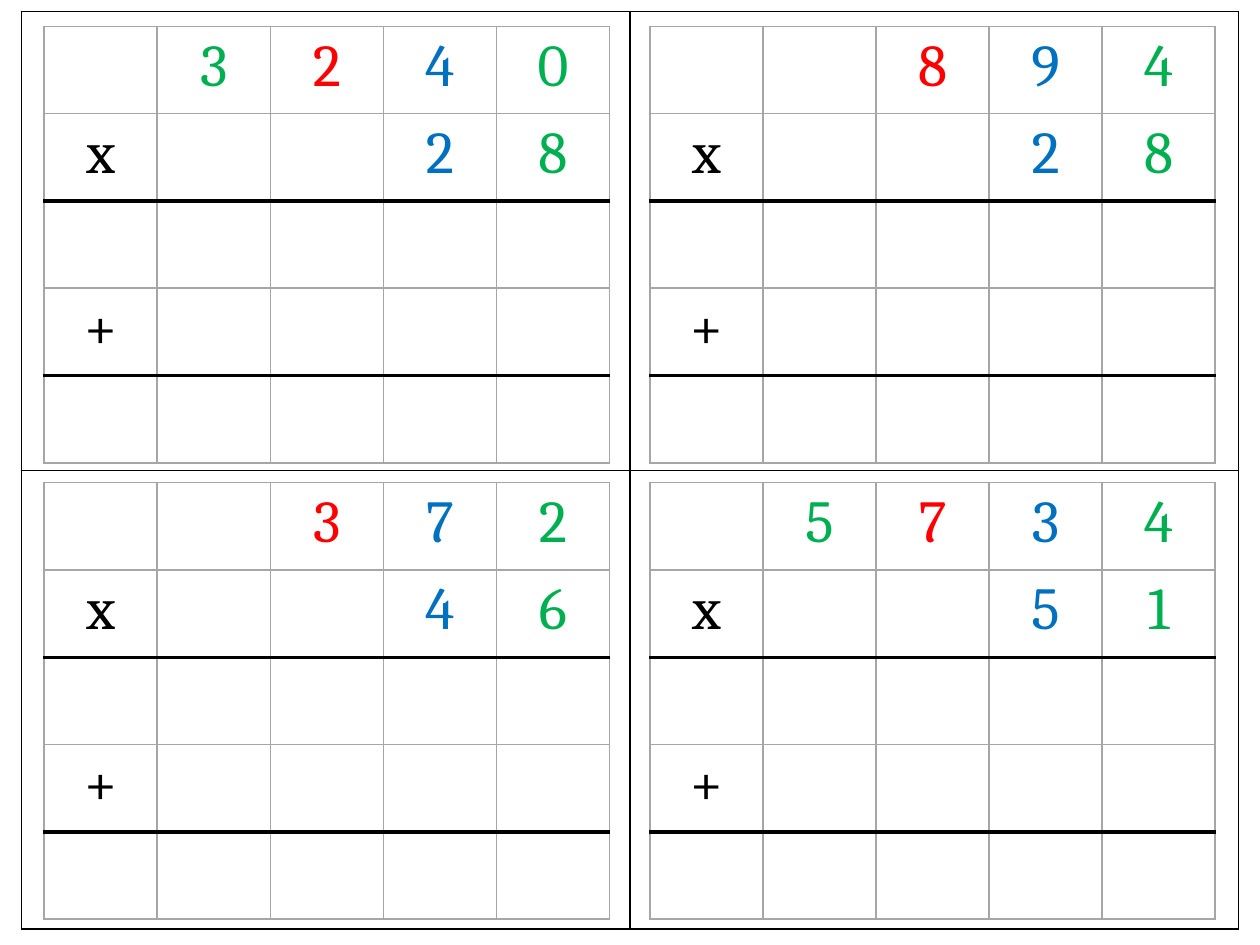
from lxml.etree import SubElement
from pptx import Presentation
from pptx.dml.color import RGBColor
from pptx.enum.text import PP_ALIGN
from pptx.oxml.ns import qn
from pptx.util import Cm, Pt

COLORS = {
    "paper": "FFFFFF",
    "ink": "000000",
    "grid": "A6A6A6",
    "green": "00B050",
    "red": "FF0000",
    "blue": "0070C0",
}
PROBLEMS = [
    [("3240", "28"), ("894", "28")],
    [("372", "46"), ("5734", "51")],
]
PLACE_COLORS = ["ink", "green", "red", "blue", "green"]
FONT, SIZE = "Cambria", 34
THIN, THICK = ("grid", 1), ("ink", 2.25)
FRAME_LINE = ("ink", 1)

FRAME_LEFT, FRAME_TOP = 0.43, 0.23
FRAME_W, FRAME_H = 12.27, 9.25
GRID_LEFT, GRID_TOP = 0.89, 0.53
GRID_DX, GRID_DY = 12.21, 9.2
CELL_W, CELL_H = 2.28, 1.76


def add_grid(slide, left, top, rows, cols, width, height):
    table = slide.shapes.add_table(
        rows, cols, Cm(left), Cm(top), Cm(cols * width), Cm(rows * height)
    ).table
    table.first_row = table.horz_banding = False
    for col in table.columns:
        col.width = Cm(width)
    for row in table.rows:
        row.height = Cm(height)
    return table


def style_cell(cell, top, bottom, side):
    tcPr = cell._tc.get_or_add_tcPr()
    borders = {"lnL": side, "lnR": side, "lnT": top, "lnB": bottom}
    for tag, (color, width) in borders.items():
        ln = SubElement(tcPr, qn(f"a:{tag}"), w=str(Pt(width)))
        fill = SubElement(ln, qn("a:solidFill"))
        SubElement(fill, qn("a:srgbClr"), val=COLORS[color])
    cell.fill.solid()
    cell.fill.fore_color.rgb = RGBColor.from_string(COLORS["paper"])


def write_cell(cell, text, color):
    p = cell.text_frame.paragraphs[0]
    p.alignment = PP_ALIGN.CENTER
    r = p.add_run()
    r.text = text
    r.font.name = FONT
    r.font.size = Pt(SIZE)
    r.font.color.rgb = RGBColor.from_string(COLORS[color])


def add_problem(slide, left, top, number, factor):
    n = len(PLACE_COLORS)
    lines = [number.rjust(n), "x" + factor.rjust(n - 1), " " * n, "+".ljust(n), " " * n]
    rules = [THIN, THIN, THICK, THIN, THICK, THIN]
    table = add_grid(slide, left, top, len(lines), n, CELL_W, CELL_H)
    for i, line in enumerate(lines):
        for j, (char, color) in enumerate(zip(line, PLACE_COLORS)):
            cell = table.cell(i, j)
            style_cell(cell, rules[i], rules[i + 1], THIN)
            if char.strip():
                write_cell(cell, char, color)


def main():
    prs = Presentation()
    prs.slide_width, prs.slide_height = Cm(25.4), Cm(19.05)
    slide = prs.slides.add_slide(prs.slide_layouts[6])

    frame = add_grid(slide, FRAME_LEFT, FRAME_TOP, 2, 2, FRAME_W, FRAME_H)
    for cell in frame.iter_cells():
        style_cell(cell, FRAME_LINE, FRAME_LINE, FRAME_LINE)

    for i, row in enumerate(PROBLEMS):
        for j, (number, factor) in enumerate(row):
            add_problem(slide, GRID_LEFT + j * GRID_DX, GRID_TOP + i * GRID_DY, number, factor)

    prs.save("out.pptx")


if __name__ == "__main__":
    main()
